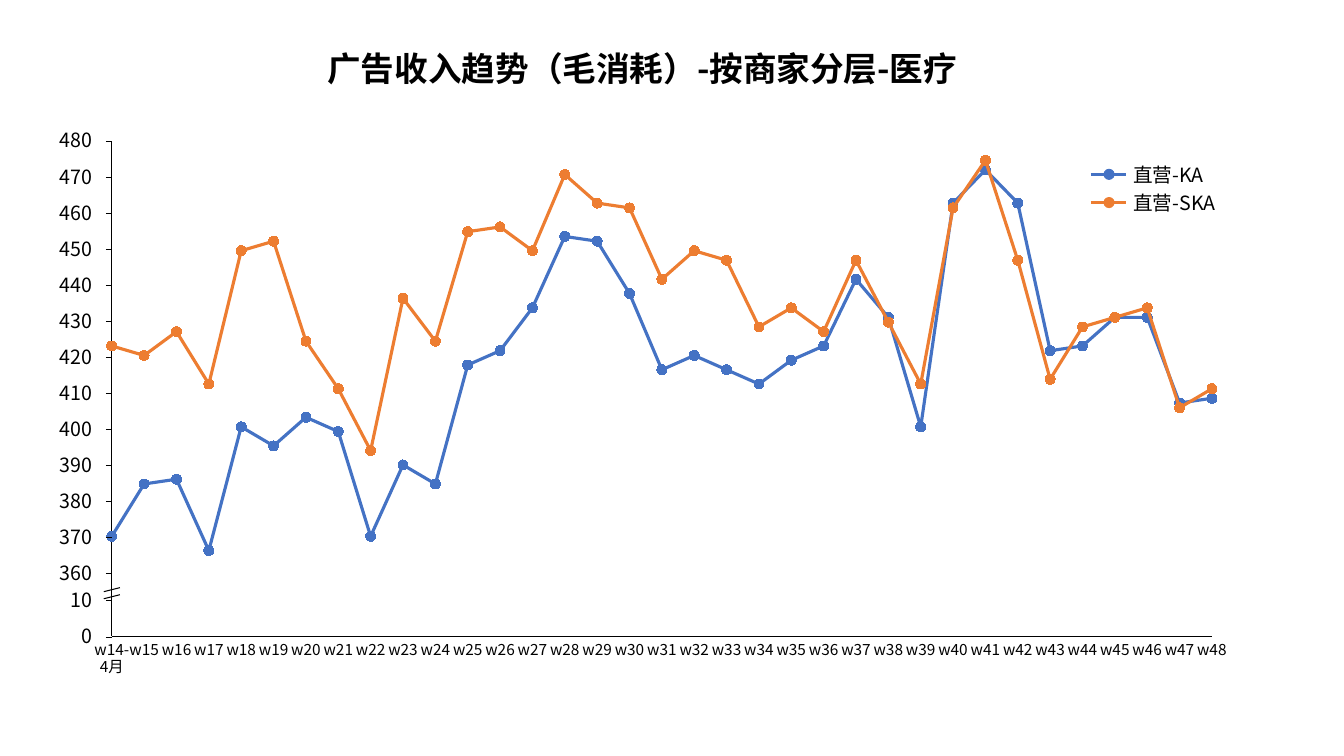
from dataclasses import dataclass

from lxml import etree
from pptx import Presentation
from pptx.chart.data import CategoryChartData
from pptx.dml.color import RGBColor
from pptx.enum import chart as ch, shapes, text
from pptx.oxml import ns
from pptx.util import Inches, Pt


@dataclass(frozen=True)
class Theme:
    font: str = "Noto Sans CJK SC"
    ink: str = "000000"
    blue: str = "4472C4"
    orange: str = "ED7D31"
    title: int = 24
    label: int = 14
    week: int = 11
    chart: int = 10
    thin: float = 0.75
    thick: float = 2.25


T = Theme()

TITLE = "广告收入趋势（毛消耗）-按商家分层-医疗"
WEEKS = ["w14-4月"] + [f"w{n}" for n in range(15, 49)]
SERIES = [
    ("直营-KA", T.blue, [
        21, 32, 33, 18, 44, 40, 46, 43, 21, 36, 32, 57, 60, 69, 84, 83, 72, 56,
        59, 56, 53, 58, 61, 75, 67, 44, 91, 98, 91, 60, 61, 67, 67, 49, 50]),
    ("直营-SKA", T.orange, [
        61, 59, 64, 53, 81, 83, 62, 52, 39, 71, 62, 85, 86, 81, 97, 91, 90, 75,
        81, 79, 65, 69, 64, 79, 66, 53, 90, 100, 79, 54, 65, 67, 69, 48, 52]),
]
AXIS_X, AXIS_RIGHT = 1.11, 12.02
AXIS_TOP, AXIS_360, AXIS_10, AXIS_0 = 1.4, 5.69, 5.96, 6.32
BREAK_BOTTOMS = (5.87, 5.94)
CHART_BOX = (1.02, 1.31, 11.09, 5.09)
PLOT = {"x": 0.008, "y": 0.018, "w": 0.984, "h": 0.965}
AXIS_MAX = 104

prs = Presentation()
prs.slide_width, prs.slide_height = Inches(13.33), Inches(7.5)
slide = prs.slides.add_slide(prs.slide_layouts[5])


def rgb(value):
    return RGBColor.from_string(value)


def put_text(content, box, size=T.label, align="CENTER", anchor="MIDDLE",
             bold=False, wrap=False, sp=None):
    sp = sp or slide.shapes.add_textbox(0, 0, 0, 0)
    sp.left, sp.top, sp.width, sp.height = map(Inches, box)
    tf = sp.text_frame
    tf.auto_size = text.MSO_AUTO_SIZE.NONE
    tf.word_wrap = wrap
    tf.margin_left = tf.margin_right = tf.margin_top = tf.margin_bottom = 0
    tf.vertical_anchor = text.MSO_ANCHOR[anchor]
    p = tf.paragraphs[0]
    p.alignment = text.PP_ALIGN[align]
    p.line_spacing = 0.9
    r = p.add_run()
    r.text = content
    r.font.name, r.font.size, r.font.bold = T.font, Pt(size), bold
    r.font.color.rgb = rgb(T.ink)
    etree.SubElement(r.font._element, ns.qn("a:ea"), typeface=T.font)


def put_line(x1, y1, x2, y2, color=T.ink, width=T.thin):
    line = slide.shapes.add_connector(
        shapes.MSO_CONNECTOR.STRAIGHT, *map(Inches, (x1, y1, x2, y2)))
    line.line.color.rgb, line.line.width = rgb(color), Pt(width)
    etree.SubElement(line._element.spPr, ns.qn("a:effectLst"))


def cross_at_points(value_axis):
    element = value_axis._element
    for old in element.findall(ns.qn("c:crossBetween")):
        element.remove(old)
    cross_tags = (ns.qn("c:crossAx"), ns.qn("c:crosses"))
    last = [e for e in element if e.tag in cross_tags][-1]
    last.addnext(etree.Element(ns.qn("c:crossBetween"), val="midCat"))


def put_chart():
    data = CategoryChartData()
    data.categories = WEEKS
    for name, _, values in SERIES:
        data.add_series(name, values)
    chart = slide.shapes.add_chart(
        ch.XL_CHART_TYPE.LINE_MARKERS, *map(Inches, CHART_BOX), data).chart
    chart.has_legend = chart.has_title = False
    chart.font.name, chart.font.size = T.font, Pt(T.chart)
    chart.font.color.rgb = rgb(T.ink)
    chart.plots[0].vary_by_categories = False
    for axis in (chart.category_axis, chart.value_axis):
        axis.has_major_gridlines = False
        axis.major_tick_mark = axis.minor_tick_mark = ch.XL_TICK_MARK.NONE
        axis.tick_label_position = ch.XL_TICK_LABEL_POSITION.NONE
        axis.format.line.color.rgb = rgb(T.ink)
        axis.format.line.width = Pt(T.thin)
    value_axis = chart.value_axis
    value_axis.minimum_scale, value_axis.maximum_scale = 0, AXIS_MAX
    cross_at_points(value_axis)
    for s, (_, color, _) in zip(chart.plots[0].series, SERIES):
        s.smooth = False
        s.format.line.color.rgb = rgb(color)
        s.format.line.width = Pt(T.thick)
        s.marker.style, s.marker.size = ch.XL_MARKER_STYLE.CIRCLE, 7
        s.marker.format.fill.solid()
        s.marker.format.fill.fore_color.rgb = rgb(color)
        s.marker.format.line.color.rgb = rgb(color)
    area = chart._chartSpace.find(".//" + ns.qn("c:plotArea"))
    for old in area.findall(ns.qn("c:layout")):
        area.remove(old)
    layout = etree.Element(ns.qn("c:layout"))
    manual = etree.SubElement(layout, ns.qn("c:manualLayout"))
    settings = {"layoutTarget": "inner", "xMode": "edge", "yMode": "edge", **PLOT}
    for tag, value in settings.items():
        etree.SubElement(manual, ns.qn(f"c:{tag}"), val=str(value))
    area.insert(0, layout)


def put_value_axis():
    step = (AXIS_360 - AXIS_TOP) / 12
    ticks = [(480 - 10 * i, AXIS_TOP + i * step) for i in range(13)]
    for value, y in ticks + [(10, AXIS_10), (0, AXIS_0)]:
        put_line(AXIS_X - 0.06, y, AXIS_X, y)
        width = 0.1 * len(str(value)) + 0.01
        put_text(str(value), (0.92 - width, y - 0.1, width, 0.21), align="RIGHT")
    for y in BREAK_BOTTOMS:
        path = slide.shapes.build_freeform(Inches(1.03), Inches(y))
        path.add_line_segments([(Inches(1.19), Inches(y - 0.04))], close=False)
        sp = path.convert_to_shape()
        sp.shadow.inherit = False
        sp.fill.background()
        sp.line.color.rgb, sp.line.width = rgb(T.ink), Pt(T.thin)


def put_weeks():
    step = (AXIS_RIGHT - AXIS_X) / (len(WEEKS) - 1)
    for i, week in enumerate(WEEKS):
        width, height = (0.28, 0.16) if i else (0.36, 0.33)
        put_text(week, (AXIS_X + i * step - width / 2, 6.37, width, height),
                 size=T.week, anchor="TOP", wrap=i == 0)


def put_legend():
    for i, (name, color, _) in enumerate(SERIES):
        y = 1.73 + 0.28 * i
        put_line(10.82, y, 11.17, y, color, T.thick)
        sp = slide.shapes.add_shape(
            shapes.MSO_SHAPE.OVAL, *map(Inches, (10.95, y - 0.05, 0.1, 0.1)))
        sp.shadow.inherit = False
        sp.fill.solid()
        sp.fill.fore_color.rgb = sp.line.color.rgb = rgb(color)
        sp.line.width = Pt(T.thin)
        put_text(name, (11.24, y - 0.09, 0.72 + 0.1 * i, 0.21), align="LEFT")


def main():
    put_text(TITLE, (3.11, 0.47, 6.52, 0.47), size=T.title, bold=True, wrap=True,
             sp=slide.shapes.title)
    put_chart()
    put_value_axis()
    put_weeks()
    put_legend()
    prs.save("out.pptx")


if __name__ == "__main__":
    main()
